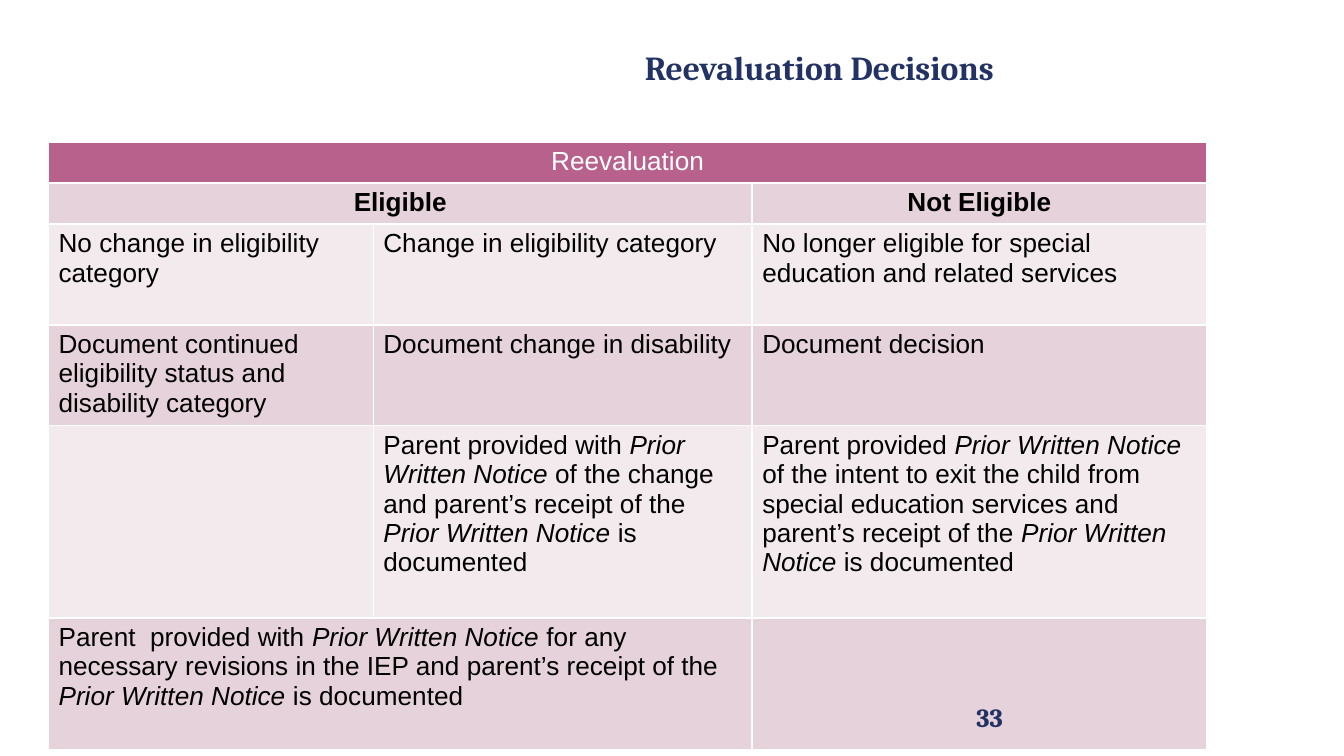
from lxml import etree
from pptx import Presentation
from pptx import util as u
from pptx.dml.color import RGBColor
from pptx.enum import text
from pptx.oxml import ns

COLORS = {
    "navy": "223264",
    "header": "B7618C",
    "dark_band": "E6D2DA",
    "light_band": "F3EAEE",
    "white": "FFFFFF",
    "black": "000000",
}
COLUMN_WIDTHS = [174, 203, 243.5]
ROW_HEIGHTS = [22, 22, 54, 54, 103, 70.5]
MERGES = [((0, 0), (0, 2)), ((1, 0), (1, 1)), ((5, 0), (5, 1))]
ROWS = [
    ["Reevaluation", "", ""],
    ["Eligible", "", "Not Eligible"],
    [
        "No change in eligibility category",
        "Change in eligibility category",
        "No longer eligible for special education and related services",
    ],
    [
        "Document continued eligibility status and disability category",
        "Document change in disability",
        "Document decision",
    ],
    [
        "",
        "Parent provided with *Prior Written Notice* of the change and "
        "parent’s receipt of the *Prior Written Notice* is documented",
        "Parent provided *Prior Written Notice *of the intent to exit the child "
        "from special education services and parent’s receipt of the "
        "*Prior Written Notice* is documented",
    ],
    [
        "Parent  provided with *Prior Written Notice *for any necessary revisions "
        "in the IEP and parent’s receipt of the *Prior Written Notice* is documented",
        "",
        "",
    ],
]


def apply(target, values):
    for name, value in values.items():
        setattr(target, name, value)


def margins(side, end):
    return {
        "margin_left": u.Pt(side),
        "margin_right": u.Pt(side),
        "margin_top": u.Pt(end),
        "margin_bottom": u.Pt(end),
    }


class SlideStyle:
    heading = {"name": "Cambria", "bold": True}
    body = {"name": "Arial", "size": u.Pt(14)}

    def __init__(self, page):
        self.page = page

    def spans(self, para, content, font, color):
        for index, part in enumerate(content.split("*")):
            if part:
                span = para.add_run()
                span.text = part
                apply(span.font, font)
                span.font.color.rgb = RGBColor.from_string(COLORS[color])
                if index % 2:
                    span.font.italic = True

    def text_box(self, frame, content, size, inset, layout):
        box = self.page.shapes.add_textbox(*map(u.Pt, frame))
        apply(box.text_frame, {
            "word_wrap": True,
            "vertical_anchor": text.MSO_ANCHOR.MIDDLE,
            **margins(*inset),
        })
        para = box.text_frame.paragraphs[0]
        apply(para, layout)
        self.spans(para, content, {**self.heading, "size": u.Pt(size)}, "navy")

    def border(self, cell):
        properties = cell._tc.get_or_add_tcPr()
        for side in ("lnL", "lnR", "lnT", "lnB"):
            line = etree.SubElement(properties, ns.qn(f"a:{side}"), w=str(u.Pt(1)))
            fill = etree.SubElement(line, ns.qn("a:solidFill"))
            etree.SubElement(fill, ns.qn("a:srgbClr"), val=COLORS["white"])

    def cell(self, cell, content, row):
        self.border(cell)
        band = "header" if row == 0 else "dark_band" if row % 2 else "light_band"
        cell.fill.solid()
        cell.fill.fore_color.rgb = RGBColor.from_string(COLORS[band])
        apply(cell, margins(5.4, 2.7))
        para = cell.text_frame.paragraphs[0]
        para.font.size = self.body["size"]
        if row < 2:
            para.alignment = text.PP_ALIGN.CENTER
        font = {**self.body, "bold": row == 1}
        self.spans(para, content, font, "white" if row == 0 else "black")

    def table(self, left, top):
        frame = (left, top, sum(COLUMN_WIDTHS), sum(ROW_HEIGHTS))
        table = self.page.shapes.add_table(
            len(ROWS), len(COLUMN_WIDTHS), *map(u.Pt, frame)
        ).table
        apply(table, {"first_row": False, "horz_banding": False})
        for column, width in zip(table.columns, COLUMN_WIDTHS):
            column.width = u.Pt(width)
        for row, height in zip(table.rows, ROW_HEIGHTS):
            row.height = u.Pt(height)
        for start, end in MERGES:
            table.cell(*start).merge(table.cell(*end))
        for row, contents in enumerate(ROWS):
            for column, content in enumerate(contents):
                self.cell(table.cell(row, column), content, row)


def main():
    deck = Presentation()
    apply(deck, {"slide_width": u.Pt(720), "slide_height": u.Pt(405)})
    style = SlideStyle(deck.slides.add_slide(deck.slide_layouts[6]))
    style.table(26, 76)
    style.text_box((248, 3, 382, 63), "Reevaluation Decisions", 18, (5.4, 2.7), {
        "alignment": text.PP_ALIGN.CENTER,
        "line_spacing": 1.15,
        "space_after": u.Pt(16),
    })
    style.text_box((516, 369.5, 168, 29.5), "33", 14, (7.2, 7.2), {})
    deck.save("out.pptx")


if __name__ == "__main__":
    main()
